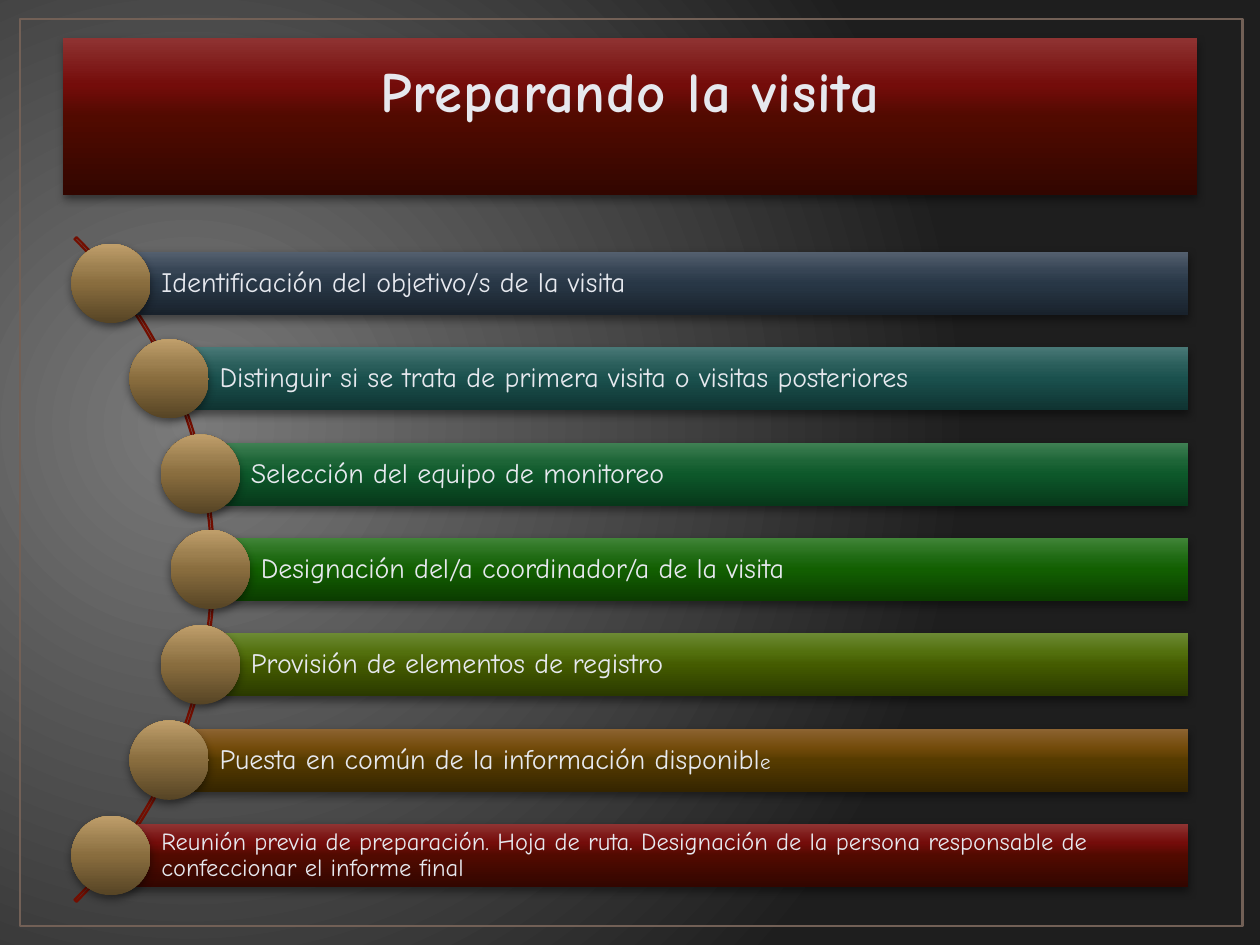
from dataclasses import dataclass
from math import sqrt

from lxml import etree
from pptx import Presentation
from pptx.dml.color import RGBColor
from pptx.enum.shapes import MSO_SHAPE
from pptx.enum.text import MSO_ANCHOR, PP_ALIGN
from pptx.oxml.ns import qn
from pptx.util import Inches, Pt

RECT, DISC, ARC = MSO_SHAPE.RECTANGLE, MSO_SHAPE.OVAL, MSO_SHAPE.BLOCK_ARC
MIDDLE, BOTTOM = MSO_ANCHOR.MIDDLE, MSO_ANCHOR.BOTTOM
LEFT, CENTER = PP_ALIGN.LEFT, PP_ALIGN.CENTER


@dataclass(frozen=True)
class Theme:
    font: str = "Comic Neue"
    text: str = "E6E8EE"
    frame: str = "726056"
    arc: str = "730E00"
    back: tuple = ("7A7A7A", "1E1E1E")
    red: tuple = ("320600", "510A00", "740C0A", "8F3332")
    gold: tuple = ("564425", "896D3E", "9D8050", "C09F6B")
    navy: tuple = ("19222C", "283746", "364454", "54606F")
    teal: tuple = ("0F3331", "1A504D", "295D5A", "487876")
    jade: tuple = ("07381A", "0D582A", "1D6537", "3F8053")
    green: tuple = ("0B3C00", "125F01", "206B14", "418538")
    olive: tuple = ("2A3900", "445B00", "53700E", "6C8A34")
    brown: tuple = ("352500", "563B00", "734B0B", "8D6432")
    stops: tuple = (0, 50, 70, 100)
    title: float = 32.4
    large: int = 16
    mid: int = 14
    small: int = 12


T = Theme()
WIDE, HIGH = 10, 7.5
TOP, LAST = 2, 6.54          # top of the first and the last bar
BAR, BALL, EDGE = 0.5, 0.63, 9.43
HUB, REACH = -1.99, 3.66     # circle that carries the discs
RING = 3.73                  # radius of the drawn arc
MID = (TOP + LAST + BAR) / 2

ROWS = (
    (T.navy, [("Identificación del objetivo/s de la visita", T.large)]),
    (T.teal, [("Distinguir si se trata de primera visita o visitas "
               "posteriores", T.large)]),
    (T.jade, [("Selección del equipo de monitoreo", T.large)]),
    (T.green, [("Designación del/a coordinador/a de la visita", T.large)]),
    (T.olive, [("Provisión de elementos de registro", T.large)]),
    (T.brown, [("Puesta en común de la información disponibl", T.large),
               ("e", T.small)]),
    (T.red, [("Reunión previa de preparación. Hoja de ruta. Designación de "
              "la persona responsable de confeccionar el informe final",
              T.mid)]),
)


def add(parent, tag, **attrs):
    node = etree.SubElement(parent, qn(tag))
    for name, value in attrs.items():
        node.set(name, str(value))
    return node


def blend(fill, host, hues, stops):
    """Start a gradient fill and return its emptied node with new stops."""
    fill.gradient()
    node = host.find(".//" + qn("a:gradFill"))
    for child in list(node):
        node.remove(child)
    group = add(node, "a:gsLst")
    for hue, stop in zip(hues, stops):
        add(add(group, "a:gs", pos=stop * 1000), "a:srgbClr", val=hue)
    return node


def paint_back(slide):
    node = blend(slide.background.fill, slide._element, T.back, (0, 100))
    way = add(node, "a:path", path="circle")
    add(way, "a:fillToRect", l=15000, t=50000, r=85000, b=60000)


def outline(slide, kind, box, hue, width):
    shape = slide.shapes.add_shape(kind, *map(Inches, box))
    shape.shadow.inherit = False
    shape.fill.background()
    shape.line.color.rgb = RGBColor.from_string(hue)
    shape.line.width = Pt(width)
    return shape


def glossy(slide, kind, box, hues):
    """Add a shape with a vertical gradient and a soft shadow."""
    shape = slide.shapes.add_shape(kind, *map(Inches, box))
    shape.line.fill.background()
    node = blend(shape.fill, shape._element, hues, T.stops)
    add(node, "a:lin", ang=270 * 60000, scaled=0)
    shape.shadow.inherit = False
    glow = add(shape._element.spPr.find(qn("a:effectLst")), "a:outerShdw",
               blurRad=Pt(5), dist=Pt(2), dir=90 * 60000, rotWithShape=0)
    add(add(glow, "a:srgbClr", val="000000"), "a:alpha", val=43000)
    return shape


def write(shape, runs, align, anchor, insets):
    frame = shape.text_frame
    frame.word_wrap = True
    frame.vertical_anchor = anchor
    (frame.margin_left, frame.margin_top,
     frame.margin_right, frame.margin_bottom) = map(Inches, insets)
    para = frame.paragraphs[0]
    para.alignment = align
    para.font.name = T.font
    para.font.color.rgb = RGBColor.from_string(T.text)
    for text, size in runs:
        run = para.add_run()
        run.text = text
        run.font.size = Pt(size)
    return para


def add_title(slide):
    box = (0.05 * WIDE, 0.04 * HIGH, 0.9 * WIDE, 1.25)
    shape = glossy(slide, RECT, box, T.red)
    para = write(shape, [("Preparando la visita", T.title)],
                 CENTER, BOTTOM, (0.1, 0.05, 0.1, 0.57))
    para.font.bold = True
    para.runs[0].font._element.set("spc", "50")


def add_arc(slide):
    box = (1.7 - 2 * RING, MID - RING, 2 * RING, 2 * RING)
    arc = outline(slide, ARC, box, T.arc, 1.25)
    for i, value in enumerate((189, 27, 0.003)):
        arc.adjustments[i] = value


def add_row(slide, y, hues, runs):
    """Add a bar centred at y that starts at its disc on the circle."""
    x = HUB + sqrt(REACH ** 2 - (y - MID) ** 2)
    bar = glossy(slide, RECT, (x, y - BAR / 2, EDGE - x, BAR), hues)
    para = write(bar, runs, LEFT, MIDDLE, (0.4, 0.04, 0.04, 0.04))
    para.line_spacing = 0.9
    glossy(slide, DISC, (x - BALL / 2, y - BALL / 2, BALL, BALL), T.gold)


def main():
    deck = Presentation()
    deck.slide_width, deck.slide_height = Inches(WIDE), Inches(HIGH)
    slide = deck.slides.add_slide(deck.slide_layouts[6])
    paint_back(slide)
    outline(slide, RECT, (0.16, 0.15, 9.7, 7.2), T.frame, 1.5)
    add_title(slide)
    add_arc(slide)
    pitch = (LAST - TOP) / (len(ROWS) - 1)
    for i, (hues, runs) in enumerate(ROWS):
        add_row(slide, TOP + BAR / 2 + i * pitch, hues, runs)
    deck.save("out.pptx")


if __name__ == "__main__":
    main()
